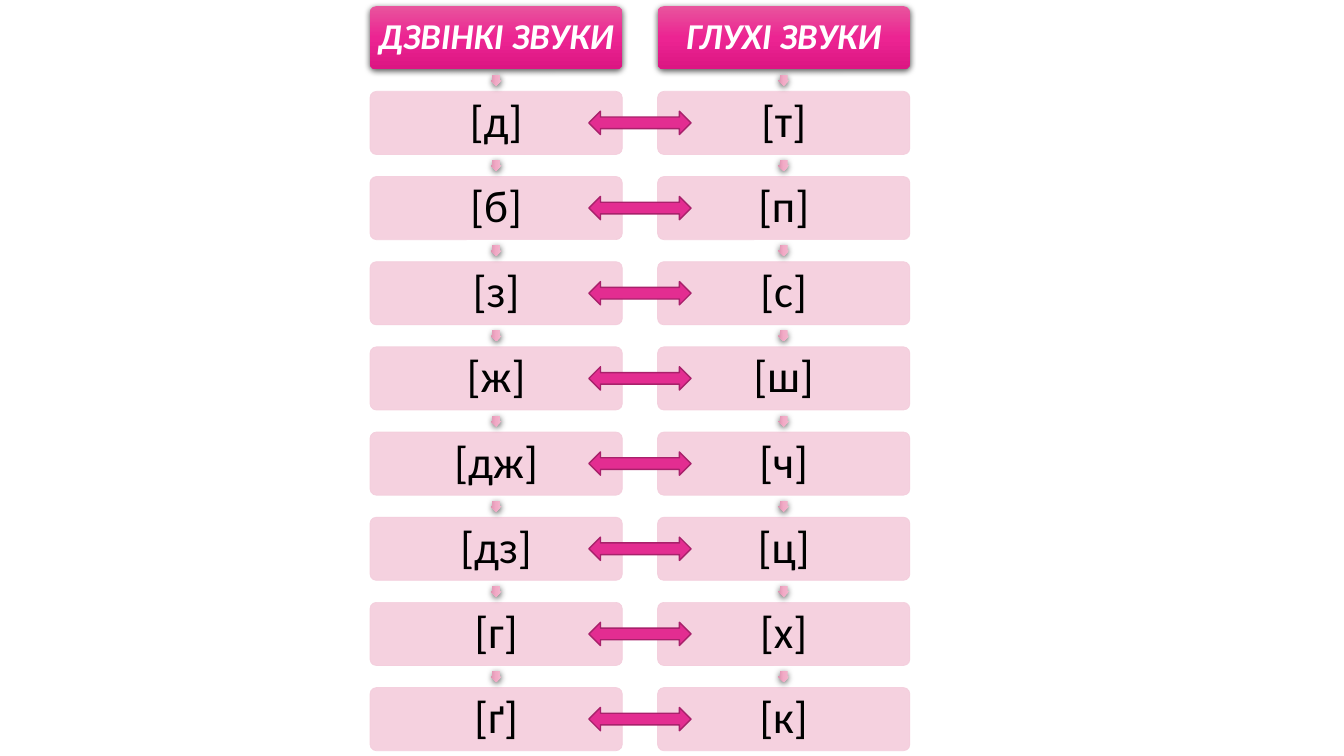
from pptx import Presentation
from pptx.dml.color import RGBColor
from pptx.enum.shapes import MSO_SHAPE
from pptx.enum.text import MSO_ANCHOR, PP_ALIGN
from pptx.oxml import parse_xml
from pptx.oxml.ns import nsdecls, qn
from pptx.util import Pt

ROUNDED = MSO_SHAPE.ROUNDED_RECTANGLE
RIGHT_ARROW = MSO_SHAPE.RIGHT_ARROW
DOUBLE_ARROW = MSO_SHAPE.LEFT_RIGHT_ARROW
MIDDLE = MSO_ANCHOR.MIDDLE
CENTER = PP_ALIGN.CENTER

WHITE = RGBColor(0xFF, 0xFF, 0xFF)
BLACK = RGBColor(0x00, 0x00, 0x00)
PALE_PINK = RGBColor(0xF4, 0xCD, 0xDC)
PINK = RGBColor(0xE3, 0x2D, 0x91)
DARK_PINK = RGBColor(0xA8, 0x21, 0x6B)
HEADER_GRADIENT = (
    RGBColor(0xE8, 0x55, 0x9D), RGBColor(0xEC, 0x24, 0x92), RGBColor(0xDC, 0x16, 0x83))
DOT_GRADIENT = (
    RGBColor(0xF2, 0xB9, 0xCF), RGBColor(0xF2, 0xAA, 0xC6), RGBColor(0xDC, 0x92, 0xAF))

COLUMNS = [
    ("ДЗВІНКІ ЗВУКИ", "[д]", "[б]", "[з]", "[ж]", "[дж]", "[дз]", "[г]", "[ґ]"),
    ("ГЛУХІ ЗВУКИ", "[т]", "[п]", "[с]", "[ш]", "[ч]", "[ц]", "[х]", "[к]"),
]
LEFT, TOP = 264.3, 4.4
CARD_WIDTH, CARD_HEIGHT = 180.2, 45.1
COLUMN_STEP, ROW_STEP = 205.4, 60.84
DOT_SIZE = 7.9
ARROW_WIDTH, ARROW_HEIGHT = 73, 16.6

deck = Presentation()
deck.slide_width, deck.slide_height = Pt(960), Pt(540)
page = deck.slides.add_slide(deck.slide_layouts[6])


def add_box(kind, left, top, width, height):
    box = page.shapes.add_shape(kind, Pt(left), Pt(top), Pt(width), Pt(height))
    box.shadow.inherit = False
    return box


def add_glossy_style(box, colors):
    box.line.fill.background()
    properties = box.element.spPr
    stops = "".join(
        f'<a:gs pos="{index * 50000}"><a:srgbClr val="{color}"/></a:gs>'
        for index, color in enumerate(colors))
    properties.find(qn("a:ln")).addprevious(parse_xml(
        f'<a:gradFill {nsdecls("a")} rotWithShape="1"><a:gsLst>{stops}</a:gsLst>'
        '<a:lin ang="5400000" scaled="0"/></a:gradFill>'))
    properties.find(qn("a:effectLst")).append(parse_xml(
        f'<a:outerShdw {nsdecls("a")} blurRad="{Pt(4.5)}" dist="{Pt(1.5)}" '
        'dir="5400000" algn="ctr" rotWithShape="0"><a:srgbClr val="000000">'
        '<a:alpha val="63000"/></a:srgbClr></a:outerShdw>'))


for column, labels in enumerate(COLUMNS):
    left = LEFT + column * COLUMN_STEP
    for row, label in enumerate(labels):
        top = TOP + row * ROW_STEP
        is_header = row == 0
        card = add_box(ROUNDED, left, top, CARD_WIDTH, CARD_HEIGHT)
        card.adjustments[0] = 0.1
        if is_header:
            add_glossy_style(card, HEADER_GRADIENT)
        else:
            card.fill.solid()
            card.fill.fore_color.rgb = PALE_PINK
            card.line.color.rgb = PALE_PINK
            card.line.width = Pt(0.5)
            for color in card.element.spPr.iter(qn("a:srgbClr")):
                color.append(parse_xml(f'<a:alpha {nsdecls("a")} val="90000"/>'))

            dot = add_box(
                RIGHT_ARROW, left + (CARD_WIDTH - DOT_SIZE) / 2,
                top - (ROW_STEP - CARD_HEIGHT + DOT_SIZE) / 2, DOT_SIZE, DOT_SIZE)
            dot.rotation = 90
            dot.adjustments[0] = 0.667
            dot.adjustments[1] = 0.5
            add_glossy_style(dot, DOT_GRADIENT)

        frame = card.text_frame
        frame.word_wrap = True
        frame.vertical_anchor = MIDDLE
        frame.margin_left = frame.margin_right = Pt(2.9)
        frame.margin_top = frame.margin_bottom = Pt(2.9)
        para = frame.paragraphs[0]
        para.text = label
        para.alignment = CENTER
        para.line_spacing = 0.9
        para.font.name = "Calibri"
        para.font.size = Pt(26 if is_header else 32)
        para.font.bold = para.font.italic = is_header
        para.font.color.rgb = WHITE if is_header else BLACK

for row in range(1, len(COLUMNS[0])):
    arrow = add_box(
        DOUBLE_ARROW, LEFT + (COLUMN_STEP + CARD_WIDTH - ARROW_WIDTH) / 2,
        TOP + row * ROW_STEP + (CARD_HEIGHT - ARROW_HEIGHT) / 2,
        ARROW_WIDTH, ARROW_HEIGHT)
    arrow.fill.solid()
    arrow.fill.fore_color.rgb = PINK
    arrow.line.color.rgb = DARK_PINK
    arrow.line.width = Pt(1)

deck.save("out.pptx")
